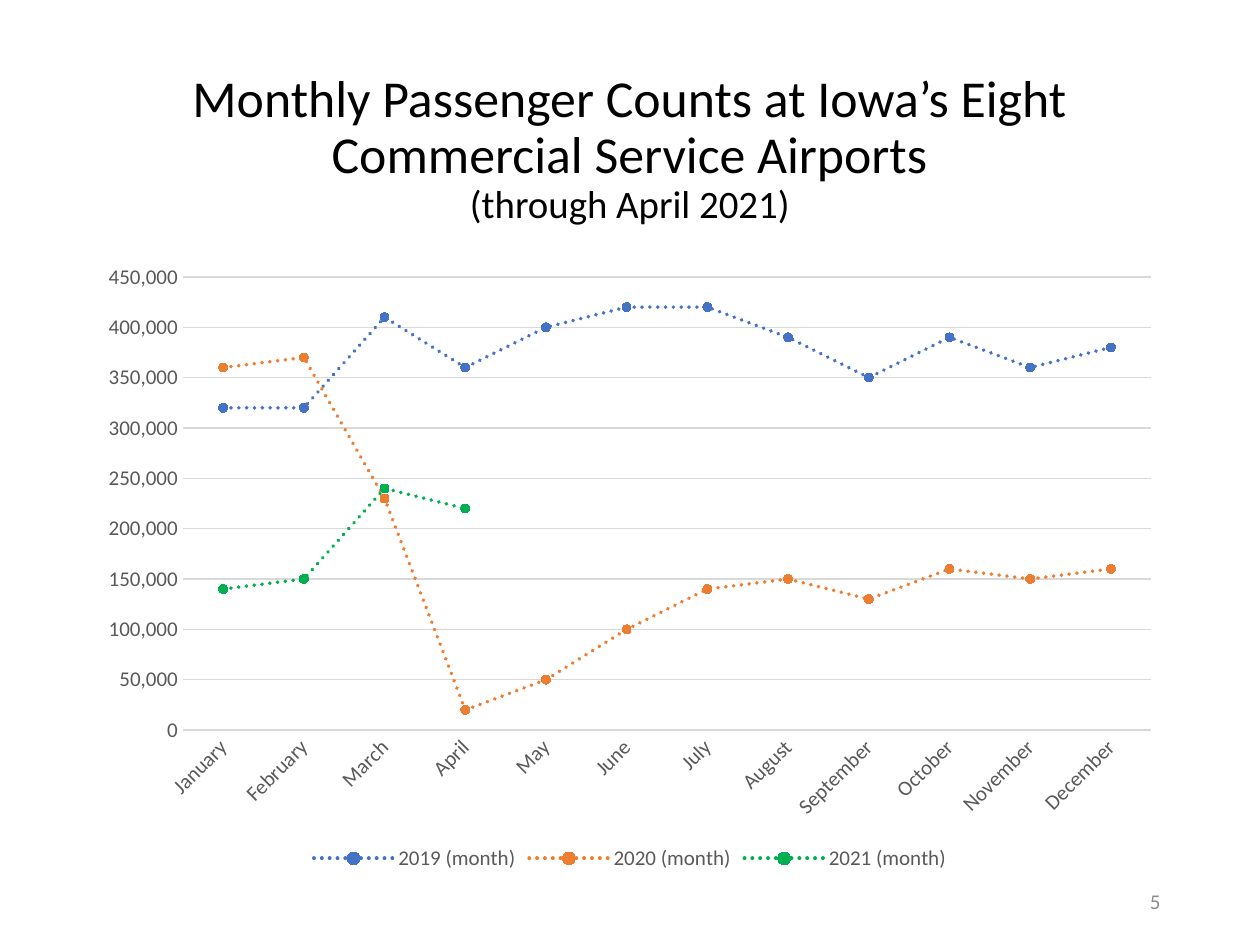
from dataclasses import dataclass

from pptx import Presentation
from pptx.chart.data import CategoryChartData
from pptx.dml.color import RGBColor
from pptx.enum.chart import XL_CHART_TYPE as ChartType
from pptx.enum.chart import XL_LEGEND_POSITION as LegendPosition
from pptx.enum.chart import XL_MARKER_STYLE as MarkerStyle
from pptx.enum.chart import XL_TICK_MARK as TickMark
from pptx.enum.dml import MSO_LINE as Dash
from pptx.enum.text import MSO_ANCHOR as Anchor
from pptx.enum.text import PP_ALIGN as Align
from pptx.oxml.ns import qn
from pptx.util import Pt

PX = 7257


@dataclass(frozen=True)
class Theme:
    font: str = "Calibri"
    ink: str = "000000"
    label: str = "595959"
    grid: str = "D9D9D9"
    page: str = "8C8C8C"
    title_size: float = 29.6
    subtitle_size: float = 22.2
    small_size: float = 12
    grid_width: float = 0.75
    series_width: float = 2.25
    marker_size: int = 5


THEME = Theme()

MONTHS = ["January", "February", "March", "April", "May", "June", "July",
          "August", "September", "October", "November", "December"]

PASSENGERS = {
    "2019 (month)": ("4472C4", [320000, 320000, 410000, 360000, 400000, 420000,
                                420000, 390000, 350000, 390000, 360000, 380000]),
    "2020 (month)": ("ED7D31", [360000, 370000, 230000, 20000, 50000, 100000,
                                140000, 150000, 130000, 160000, 150000, 160000]),
    "2021 (month)": ("00B050", [140000, 150000, 240000, 220000] + [None] * 8),
}


def px(*lengths):
    return [length * PX for length in lengths]


def apply(target, formats):
    for name, value in formats.items():
        setattr(target, name, value)


def style_font(font, size, color):
    apply(font, {"name": THEME.font, "size": Pt(size), "bold": False})
    font.color.rgb = RGBColor.from_string(color)


def style_line(line, color, width):
    line.color.rgb = RGBColor.from_string(color)
    line.width = Pt(width)


def add_text(slide, box, lines, align, anchor, spacing=1.0):
    frame = slide.shapes.add_textbox(*px(*box)).text_frame
    apply(frame, {"word_wrap": True, "vertical_anchor": anchor})
    for index, (words, size, color) in enumerate(lines):
        paragraph = frame.add_paragraph() if index else frame.paragraphs[0]
        apply(paragraph, {"alignment": align, "line_spacing": spacing})
        run = paragraph.add_run()
        run.text = words
        style_font(run.font, size, color)


def style_axes(chart):
    months, counts = chart.category_axis, chart.value_axis
    for axis in (months, counts):
        apply(axis, {"major_tick_mark": TickMark.NONE,
                     "minor_tick_mark": TickMark.NONE})
        style_font(axis.tick_labels.font, THEME.small_size, THEME.label)
    style_line(months.format.line, THEME.grid, THEME.grid_width)
    months_body = months._element.find(qn("c:txPr")).find(qn("a:bodyPr"))
    months_body.set("rot", "-2700000")
    apply(counts, {"minimum_scale": 0, "maximum_scale": 450000,
                   "major_unit": 50000, "has_major_gridlines": True})
    apply(counts.tick_labels, {"number_format": "#,##0",
                               "number_format_is_linked": False})
    counts.format.line.fill.background()
    style_line(counts.major_gridlines.format.line, THEME.grid, THEME.grid_width)


def style_year(year, color):
    year.smooth = False
    style_line(year.format.line, color, THEME.series_width)
    year.format.line.dash_style = Dash.ROUND_DOT
    year._element.find(qn("c:spPr")).find(qn("a:ln")).set("cap", "rnd")
    marker = year.marker
    apply(marker, {"style": MarkerStyle.CIRCLE, "size": THEME.marker_size})
    marker.format.fill.solid()
    marker.format.fill.fore_color.rgb = RGBColor.from_string(color)
    style_line(marker.format.line, color, THEME.grid_width)


def add_passenger_chart(slide, box):
    data = CategoryChartData(number_format="#,##0")
    data.categories = MONTHS
    for name, (_, counts) in PASSENGERS.items():
        data.add_series(name, counts)
    chart = slide.shapes.add_chart(ChartType.LINE_MARKERS, *px(*box), data).chart
    apply(chart, {"has_title": False, "has_legend": True})
    style_font(chart.font, THEME.small_size, THEME.label)
    apply(chart.legend, {"position": LegendPosition.BOTTOM,
                         "include_in_layout": False})
    style_font(chart.legend.font, THEME.small_size, THEME.label)
    style_axes(chart)
    plot = chart.plots[0]
    plot.vary_by_categories = False
    for year, (color, _) in zip(plot.series, PASSENGERS.values()):
        style_year(year, color)


def main():
    deck = Presentation()
    apply(deck, {"slide_width": 1260 * PX, "slide_height": 945 * PX})
    slide = deck.slides.add_slide(deck.slide_layouts[6])
    add_passenger_chart(slide, (87, 252, 1086, 624))
    add_text(slide, (890, 876, 283, 50),
             [("5", THEME.small_size, THEME.page)], Align.RIGHT, Anchor.MIDDLE)
    add_text(slide, (87, 50, 1086, 183),
             [("Monthly Passenger Counts at Iowa’s Eight Commercial Service Airports",
               THEME.title_size, THEME.ink),
              ("(through April 2021)", THEME.subtitle_size, THEME.ink)],
             Align.CENTER, Anchor.BOTTOM, 0.9)
    deck.save("out.pptx")


if __name__ == "__main__":
    main()
